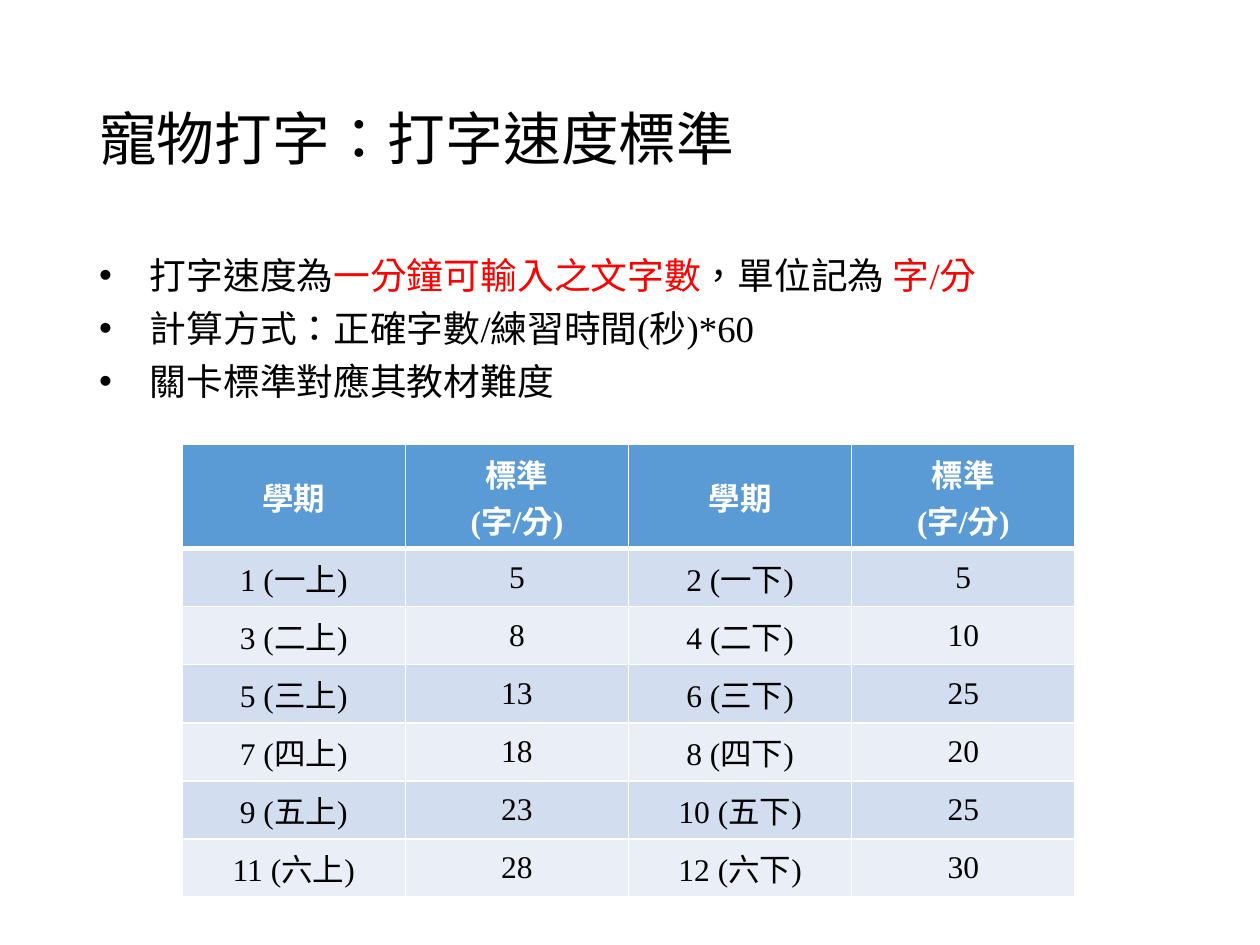
"""Build the typing speed standards slide with its term table."""
from lxml import etree
from pptx import Presentation
from pptx.dml.color import RGBColor
from pptx.enum.text import MSO_ANCHOR, PP_ALIGN
from pptx.oxml.ns import qn
from pptx.util import Cm, Pt

MIDDLE = MSO_ANCHOR.MIDDLE
CENTER = PP_ALIGN.CENTER
BLACK = RGBColor(0x00, 0x00, 0x00)
WHITE = RGBColor(0xFF, 0xFF, 0xFF)
RED = RGBColor(0xFF, 0x00, 0x00)
HEADER_BLUE = RGBColor(0x5B, 0x9B, 0xD5)
BAND_DARK = RGBColor(0xD2, 0xDE, 0xEF)
BAND_LIGHT = RGBColor(0xEA, 0xEF, 0xF7)
SANS = "Noto Sans CJK SC"
SERIF = "Times New Roman"


def write(paragraph, text, size=18, font=SERIF, color=BLACK, bold=False):
    for number, line in enumerate(text.split("\n")):
        if number:
            paragraph.add_line_break()
        run = paragraph.add_run()
        run.text = line
        run.font.size = Pt(size)
        run.font.name = font
        run.font.bold = bold
        run.font.color.rgb = color
        properties = run._r.get_or_add_rPr()
        properties.set("lang", "zh-TW")
        etree.SubElement(properties, qn("a:ea"), typeface=SANS)


def draw_border(cell, side, points):
    line = etree.SubElement(cell._tc.get_or_add_tcPr(), qn(f"a:ln{side}"), w=str(Pt(points)))
    fill = etree.SubElement(line, qn("a:solidFill"))
    etree.SubElement(fill, qn("a:srgbClr"), val=str(WHITE))


prs = Presentation()
prs.slide_width = Cm(25.4)
prs.slide_height = Cm(19.05)
slide = prs.slides.add_slide(prs.slide_layouts[6])

title = slide.shapes.add_textbox(Cm(1.75), Cm(1.01), Cm(21.9), Cm(3.68)).text_frame
title.word_wrap = True
title.vertical_anchor = MIDDLE
title.paragraphs[0].line_spacing = 0.9
write(title.paragraphs[0], "寵物打字：打字速度標準", size=33, font=SANS)

points = [
    [("打字速度為", BLACK), ("一分鐘可輸入之文字數", RED), ("，單位記為 ", BLACK), ("字/分", RED)],
    [("計算方式：正確字數/練習時間(秒)*60", BLACK)],
    [("關卡標準對應其教材難度", BLACK)],
]
rules = slide.shapes.add_textbox(Cm(1.75), Cm(5.07), Cm(21.9), Cm(12.09)).text_frame
rules.word_wrap = True
for index, parts in enumerate(points):
    paragraph = rules.add_paragraph() if index else rules.paragraphs[0]
    paragraph.line_spacing = 0.9
    paragraph.space_before = Pt(7.5 if index else 0)
    layout = paragraph._p.get_or_add_pPr()
    layout.set("marL", str(Cm(1.02)))
    layout.set("indent", str(Cm(-1.02)))
    etree.SubElement(layout, qn("a:buFont"), typeface="Arial")
    etree.SubElement(layout, qn("a:buChar"), char="•")
    for text, color in parts:
        write(paragraph, text, size=21, color=color)

rows = [["學期", "標準\n(字/分)"] * 2]
speeds = [(5, 5), (8, 10), (13, 25), (18, 20), (23, 25), (28, 30)]
for index, (grade, (first, second)) in enumerate(zip("一二三四五六", speeds)):
    term = 2 * index + 1
    rows.append([f"{term} ({grade}上)", str(first), f"{term + 1} ({grade}下)", str(second)])

standards = slide.shapes.add_table(
    len(rows), 4, Cm(3.67), Cm(8.96), Cm(18), Cm(9.12)).table
for column in standards.columns:
    column.width = Cm(4.5)
for row, values in enumerate(rows):
    header = row == 0
    standards.rows[row].height = Cm(2.1 if header else 1.17)
    background = HEADER_BLUE if header else (BAND_LIGHT, BAND_DARK)[row % 2]
    for column, text in enumerate(values):
        cell = standards.cell(row, column)
        cell.vertical_anchor = MIDDLE
        for side in "LRTB":
            thick = (row, side) in ((0, "B"), (1, "T"))
            draw_border(cell, side, 3 if thick else 1)
        cell.fill.solid()
        cell.fill.fore_color.rgb = background
        paragraph = cell.text_frame.paragraphs[0]
        paragraph.alignment = CENTER
        write(paragraph, text, color=WHITE if header else BLACK, bold=header)

prs.save("out.pptx")
